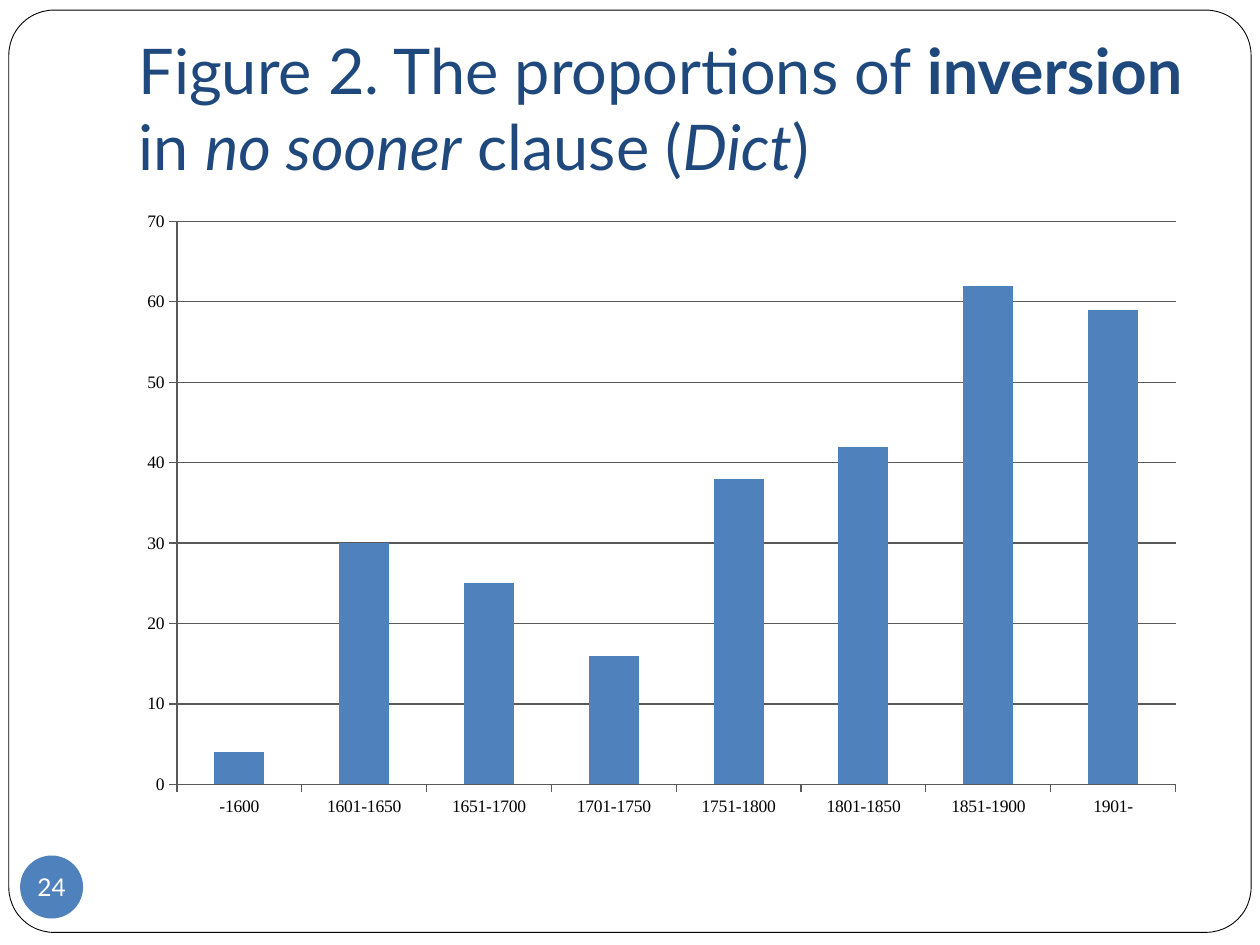
from pptx import Presentation
from pptx import util as u
from pptx.chart.data import CategoryChartData
from pptx.dml.color import RGBColor
from pptx.enum import chart as charts, shapes, text

NAVY = RGBColor(0x1F, 0x49, 0x7D)
BLUE = RGBColor(0x4F, 0x81, 0xBD)
WHITE = RGBColor(0xFF, 0xFF, 0xFF)
BLACK = RGBColor(0, 0, 0)
GRAY = RGBColor(0x59, 0x59, 0x59)


def add_span(para, words, size, color, font="Lato", bold=False, italic=False):
    span = para.add_run()
    span.text = words
    span.font.name = font
    span.font.size = u.Pt(size)
    span.font.bold = bold
    span.font.italic = italic
    span.font.color.rgb = color


deck = Presentation()
deck.slide_width, deck.slide_height = u.Inches(10), u.Inches(7.5)
page = deck.slides.add_slide(deck.slide_layouts[5])
title = page.shapes.title

# Rounded page frame, placed behind the title
frame = page.shapes.add_shape(
    shapes.MSO_SHAPE.ROUNDED_RECTANGLE,
    u.Inches(0.07), u.Inches(0.08), u.Inches(9.86), u.Inches(7.32))
frame.adjustments[0] = 0.049
frame.shadow.inherit = False
frame.fill.solid()
frame.fill.fore_color.rgb = WHITE
frame.line.color.rgb = BLACK
frame.line.width = u.Pt(0.5)
title._element.addprevious(frame._element)

# Title
title.left, title.top = u.Inches(1), u.Inches(0.3)
title.width, title.height = u.Inches(8.5), u.Inches(1.25)
box = title.text_frame
box.word_wrap = True
box.auto_size = text.MSO_AUTO_SIZE.NONE
box.vertical_anchor = text.MSO_ANCHOR.BOTTOM
box.margin_left = box.margin_right = box.margin_bottom = u.Inches(0.1)
box.margin_top = u.Inches(0.05)
para = box.paragraphs[0]
para.alignment = text.PP_ALIGN.LEFT
for words, style in [
    ("Figure 2. The proportions of ", {}),
    ("inversion", {"bold": True}),
    (" in ", {}),
    ("no sooner", {"italic": True}),
    (" clause (", {}),
    ("Dict", {"italic": True}),
    (")", {}),
]:
    add_span(para, words, 36, NAVY, **style)

# Page number badge
badge = page.shapes.add_shape(
    shapes.MSO_SHAPE.OVAL,
    u.Inches(0.16), u.Inches(6.79), u.Inches(0.5), u.Inches(0.5))
badge.shadow.inherit = False
badge.fill.solid()
badge.fill.fore_color.rgb = BLUE
badge.line.fill.background()
box = badge.text_frame
box.word_wrap = False
box.vertical_anchor = text.MSO_ANCHOR.MIDDLE
box.margin_left = box.margin_right = box.margin_top = box.margin_bottom = 0
box.paragraphs[0].alignment = text.PP_ALIGN.CENTER
add_span(box.paragraphs[0], "24", 14, WHITE)

# Column chart of inversion by period
data = CategoryChartData()
data.categories = ["-1600", "1601-1650", "1651-1700", "1701-1750",
                   "1751-1800", "1801-1850", "1851-1900", "1901-"]
data.add_series("Series 1", [4, 30, 25, 16, 38, 42, 62, 59])
chart = page.shapes.add_chart(
    charts.XL_CHART_TYPE.COLUMN_CLUSTERED,
    u.Inches(1), u.Inches(1.58), u.Inches(8.5), u.Inches(5), data).chart
chart.has_title = False
chart.has_legend = False
chart.font.name = "Times New Roman"
chart.font.size = u.Pt(10)
chart.font.color.rgb = BLACK

plot = chart.plots[0]
plot.vary_by_categories = False
plot.gap_width = 150
plot.series[0].format.fill.solid()
plot.series[0].format.fill.fore_color.rgb = BLUE

for axis in (chart.category_axis, chart.value_axis):
    axis.major_tick_mark = charts.XL_TICK_MARK.OUTSIDE
    axis.minor_tick_mark = charts.XL_TICK_MARK.NONE
    axis.format.line.color.rgb = GRAY
    axis.tick_labels.font.name = "Times New Roman"
    axis.tick_labels.font.size = u.Pt(10)
    axis.tick_labels.font.color.rgb = BLACK
chart.value_axis.minimum_scale = 0
chart.value_axis.maximum_scale = 70
chart.value_axis.major_unit = 10
chart.value_axis.has_major_gridlines = True
chart.value_axis.major_gridlines.format.line.color.rgb = GRAY

deck.save("out.pptx")
